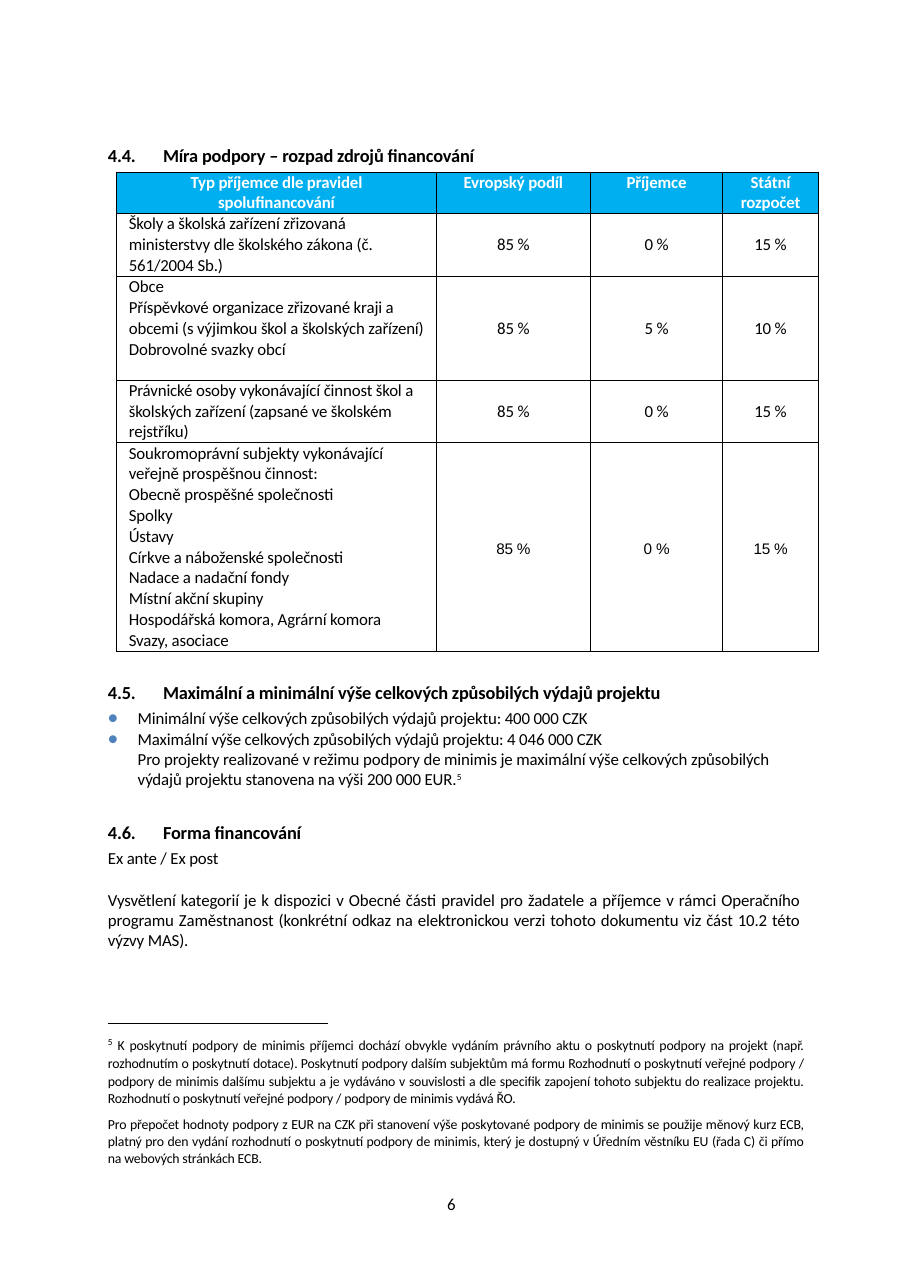
import pptx
import pptx.util
import pptx.dml.color
import pptx.enum.text
import pptx.enum.shapes
import lxml.etree

Inches = pptx.util.Inches
Pt = pptx.util.Pt
ALIGN = pptx.enum.text.PP_ALIGN
ANCHOR = pptx.enum.text.MSO_ANCHOR
NS = "http://schemas.openxmlformats.org/drawingml/2006/main"

COLORS = {"text": "000000", "header": "00AFEF", "header_text": "FFFFFF", "bullet": "4F81BC"}
FONT = "Calibri"
LEFT = 0.98

TITLE = "4.4.\tMíra podpory – rozpad zdrojů financování"
COLUMNS = [2.9, 1.4, 1.2, 0.87]
ROW_HEIGHTS = [0.38, 0.57, 0.94, 0.57, 1.88]
ROWS = [
    ("Typ příjemce dle pravidel\nspolufinancování", "Evropský podíl", "Příjemce", "Státní\nrozpočet"),
    ("Školy a školská zařízení zřizovaná\nministerstvy dle školského zákona (č. 561/2004 Sb.)",
     "85 %", "0 %", "15 %"),
    ("Obce\nPříspěvkové organizace zřizované kraji a obcemi (s výjimkou škol a školských zařízení)\n"
     "Dobrovolné svazky obcí", "85 %", "5 %", "10 %"),
    ("Právnické osoby vykonávající činnost škol a školských zařízení (zapsané ve školském rejstříku)",
     "85 %", "0 %", "15 %"),
    ("Soukromoprávní subjekty vykonávající veřejně prospěšnou činnost:\n"
     "Obecně prospěšné společnosti\nSpolky\nÚstavy\nCírkve a náboženské společnosti\n"
     "Nadace a nadační fondy\nMístní akční skupiny\nHospodářská komora, Agrární komora\n"
     "Svazy, asociace", "85 %", "0 %", "15 %"),
]
BODY = [
    ("heading", 0, "4.5.\tMaximální a minimální výše celkových způsobilých výdajů projektu"),
    ("bullet", 3.1, "Minimální výše celkových způsobilých výdajů projektu: 400 000 CZK"),
    ("bullet", 0.2, "Maximální výše celkových způsobilých výdajů projektu: 4 046 000 CZK"),
    ("indented", 0.1, "Pro projekty realizované v režimu podpory de minimis je maximální výše celkových "
     "způsobilých výdajů projektu stanovena na výši 200 000 EUR.^5^"),
    ("heading", 21, "4.6.\tForma financování"),
    ("plain", 3.1, "Ex ante / Ex post"),
    ("plain", 14, "Vysvětlení kategorií je k dispozici v Obecné části pravidel pro žadatele a příjemce "
     "v rámci Operačního programu Zaměstnanost (konkrétní odkaz na elektronickou verzi tohoto "
     "dokumentu viz část 10.2 této výzvy MAS)."),
]
FOOTNOTE = [
    (1.06, 0, "^5^ K poskytnutí podpory de minimis příjemci dochází obvykle vydáním právního aktu o "
     "poskytnutí podpory na projekt (např. rozhodnutím o poskytnutí dotace). Poskytnutí podpory dalším "
     "subjektům má formu Rozhodnutí o poskytnutí veřejné podpory / podpory de minimis dalšímu subjektu "
     "a je vydáváno v souvislosti a dle specifik zapojení tohoto subjektu do realizace projektu. "
     "Rozhodnutí o poskytnutí veřejné podpory / podpory de minimis vydává ŘO."),
    (1.02, 6, "Pro přepočet hodnoty podpory z EUR na CZK při stanovení výše poskytované podpory de minimis "
     "se použije měnový kurz ECB, platný pro den vydání rozhodnutí o poskytnutí podpory de minimis, který "
     "je dostupný v Úředním věstníku EU (řada C) či přímo na webových stránkách ECB."),
]
PAGE_NUMBER = "6"


def rgb(name):
    return pptx.dml.color.RGBColor.from_string(COLORS[name])


def add(parent, tag, **attrs):
    return lxml.etree.SubElement(parent, f"{{{NS}}}{tag}", attrs)


def write(p, text, size, bold=False, color="text", font=FONT, align=ALIGN.LEFT, spacing=1.0, before=0):
    p.alignment, p.line_spacing, p.space_before = align, spacing, Pt(before)
    for i, part in enumerate(text.split("^")):
        if not part:
            continue
        r = p.add_run()
        r.text = part
        r.font.size, r.font.bold, r.font.name = Pt(size), bold, font
        r.font.color.rgb = rgb(color)
        rPr = r._r.get_or_add_rPr()
        rPr.set("spc", "-10")
        if i % 2:
            r.font.size = Pt(10.5)
            rPr.set("baseline", "32000")


def layout(p, margin=0, indent=0, bullet=False, tab=None):
    pPr = p._p.get_or_add_pPr()
    pPr.set("marL", str(Inches(margin)))
    pPr.set("indent", str(Inches(indent)))
    if bullet:
        add(add(pPr, "buClr"), "srgbClr", val=COLORS["bullet"])
        add(pPr, "buFont", typeface=FONT)
        add(pPr, "buChar", char="●")
    else:
        add(pPr, "buNone")
    if tab:
        add(add(pPr, "tabLst"), "tab", pos=str(Inches(tab)), algn="l")


def place(sp, left, top, width, height):
    sp.left, sp.top, sp.width, sp.height = map(Inches, (left, top, width, height))
    tf = sp.text_frame
    tf.word_wrap = True
    tf.auto_size = pptx.enum.text.MSO_AUTO_SIZE.NONE
    tf.vertical_anchor = ANCHOR.TOP
    tf.margin_left = tf.margin_top = tf.margin_right = tf.margin_bottom = 0
    return tf


def paragraphs(tf, items):
    for i, item in enumerate(items):
        yield (tf.add_paragraph() if i else tf.paragraphs[0]), item


def border(cell):
    tcPr = cell._tc.get_or_add_tcPr()
    for i, side in enumerate(("lnL", "lnR", "lnT", "lnB")):
        ln = lxml.etree.Element(f"{{{NS}}}{side}", w=str(Pt(0.5)))
        add(add(ln, "solidFill"), "srgbClr", val=COLORS["text"])
        tcPr.insert(i, ln)


def fill_table(table):
    table.horz_banding = False
    for column, width in zip(table.columns, COLUMNS):
        column.width = Inches(width)
    for i, (row, height) in enumerate(zip(ROWS, ROW_HEIGHTS)):
        table.rows[i].height = Inches(height)
        for j, text in enumerate(row):
            cell = table.cell(i, j)
            header, label = i == 0, i > 0 and j == 0
            cell.margin_top = cell.margin_right = cell.margin_bottom = 0
            cell.margin_left = Inches(0.11 if label else 0)
            cell.vertical_anchor = ANCHOR.TOP if header or label else ANCHOR.MIDDLE
            if header:
                cell.fill.solid()
                cell.fill.fore_color.rgb = rgb("header")
            else:
                cell.fill.background()
            border(cell)
            arial = i == len(ROWS) - 1 and not label
            for p, line in paragraphs(cell.text_frame, text.split("\n")):
                write(p, line, 10 if arial else 11, header, "header_text" if header else "text",
                      "Arial" if arial else FONT, ALIGN.LEFT if label else ALIGN.CENTER, Pt(13.6))


def main():
    prs = pptx.Presentation()
    prs.slide_width, prs.slide_height = Inches(8.26), Inches(11.69)
    s = prs.slides.add_slide(prs.slide_layouts[1])

    p = place(s.shapes.title, LEFT, 1.31, 5, 0.22).paragraphs[0]
    layout(p, tab=0.5)
    write(p, TITLE, 12, True)

    fill_table(s.shapes.add_table(len(ROWS), len(COLUMNS), Inches(1.06), Inches(1.56),
                                  Inches(sum(COLUMNS)), Inches(sum(ROW_HEIGHTS))).table)

    layouts = {"heading": {"tab": 0.56}, "bullet": {"margin": 0.27, "indent": -0.27, "bullet": True},
               "indented": {"margin": 0.27}, "plain": {}}
    tf = place(s.placeholders[1], LEFT, 6.18, 6.28, 2.45)
    for p, (kind, before, text) in paragraphs(tf, BODY):
        layout(p, **layouts[kind])
        heading = kind == "heading"
        write(p, text, 12 if heading else 11, heading, before=before,
              align=ALIGN.JUSTIFY if kind == "plain" else ALIGN.LEFT)

    rule = s.shapes.add_connector(pptx.enum.shapes.MSO_CONNECTOR.STRAIGHT, Inches(LEFT), Inches(9.29),
                                  Inches(LEFT + 2), Inches(9.29))
    rule.line.color.rgb = rgb("text")
    rule.line.width = Pt(0.72)
    add(rule._element.spPr, "effectLst")

    tf = place(s.shapes.add_textbox(0, 0, 0, 0), LEFT, 9.38, 6.31, 1.19)
    for p, (spacing, before, text) in paragraphs(tf, FOOTNOTE):
        write(p, text, 9, align=ALIGN.JUSTIFY, spacing=spacing, before=before)

    tf = place(s.shapes.add_textbox(0, 0, 0, 0), 4.06, 10.83, 0.2, 0.18)
    write(tf.paragraphs[0], PAGE_NUMBER, 11)

    prs.save("out.pptx")


if __name__ == "__main__":
    main()
